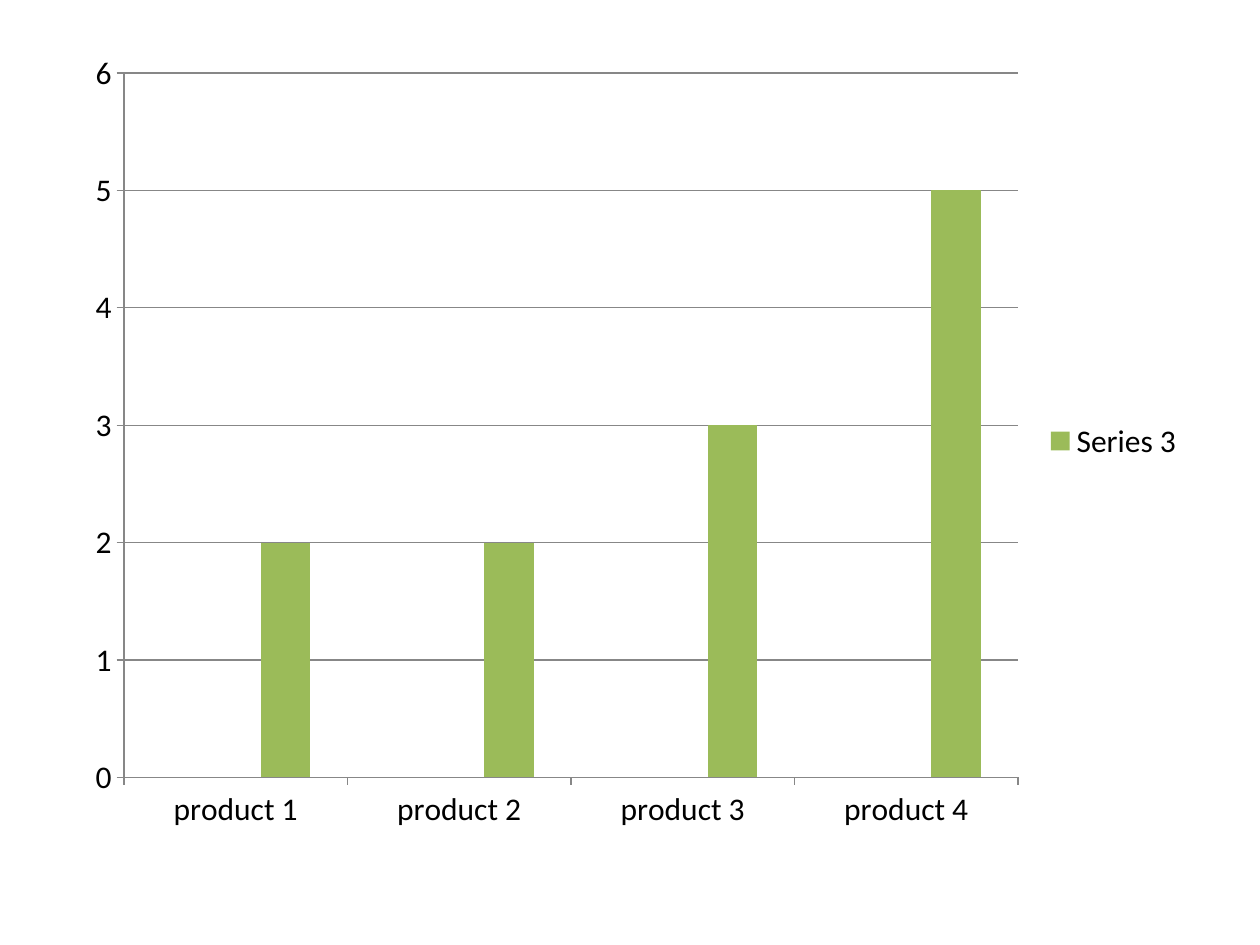
from lxml import etree
from pptx import Presentation
from pptx.chart.data import CategoryChartData
from pptx.dml.color import RGBColor
from pptx.enum.chart import XL_CHART_TYPE, XL_LEGEND_POSITION, XL_TICK_MARK
from pptx.oxml.ns import qn
from pptx.util import Inches, Pt

COLUMNS = XL_CHART_TYPE.COLUMN_CLUSTERED
LEGEND_RIGHT = XL_LEGEND_POSITION.RIGHT
TICK_OUTSIDE = XL_TICK_MARK.OUTSIDE

BLACK = RGBColor(0x00, 0x00, 0x00)
GRAY = RGBColor(0x87, 0x87, 0x87)
BLUE = RGBColor(0x4F, 0x81, 0xBD)
RED = RGBColor(0xC0, 0x50, 0x4D)
GREEN = RGBColor(0x9B, 0xBB, 0x59)

SLIDE_WIDTH, SLIDE_HEIGHT = Inches(10), Inches(7.5)
CHART_BOX = (Inches(0.58), Inches(0.3), Inches(8.92), Inches(6.4))

PRODUCTS = [f"product {number}" for number in range(1, 5)]
# The first two series hold no values but keep their place in each cluster
SERIES = [
    ("Series 1", [None] * len(PRODUCTS), BLUE),
    ("Series 2", [None] * len(PRODUCTS), RED),
    ("Series 3", [2, 2, 3, 5], GREEN),
]
EMPTY_SERIES = (0, 1)

FONT_FORMAT = {"name": "Calibri", "size": Pt(18), "bold": False}
VALUE_SCALE = {"minimum_scale": 0, "maximum_scale": 6, "major_unit": 1,
               "has_major_gridlines": True}


def set_attributes(target, values):
    for name, value in values.items():
        setattr(target, name, value)


def style_line(line):
    line.color.rgb = GRAY
    line.width = Pt(0.75)


def hide_legend_entries(legend, indexes):
    """Remove the given series from the legend."""
    position = legend._element.find(qn("c:legendPos"))
    for index in reversed(indexes):
        entry = etree.Element(qn("c:legendEntry"))
        etree.SubElement(entry, qn("c:idx")).set("val", str(index))
        etree.SubElement(entry, qn("c:delete")).set("val", "1")
        position.addnext(entry)


def add_product_chart(slide, box):
    data = CategoryChartData()
    data.categories = PRODUCTS
    for name, values, _ in SERIES:
        data.add_series(name, values)
    chart = slide.shapes.add_chart(COLUMNS, *box, data).chart
    chart.has_title = False
    set_attributes(chart.font, FONT_FORMAT)
    chart.font.color.rgb = BLACK

    # Columns
    plot = chart.plots[0]
    set_attributes(plot, {"gap_width": 150, "overlap": 0, "vary_by_categories": False})
    for series, (_, _, color) in zip(plot.series, SERIES):
        series.format.fill.solid()
        series.format.fill.fore_color.rgb = color

    # Axes and gridlines
    for axis in (chart.category_axis, chart.value_axis):
        axis.major_tick_mark = TICK_OUTSIDE
        style_line(axis.format.line)
    set_attributes(chart.value_axis, VALUE_SCALE)
    style_line(chart.value_axis.major_gridlines.format.line)

    # Legend
    chart.has_legend = True
    set_attributes(chart.legend, {"position": LEGEND_RIGHT, "include_in_layout": False})
    hide_legend_entries(chart.legend, EMPTY_SERIES)


def main():
    presentation = Presentation()
    presentation.slide_width = SLIDE_WIDTH
    presentation.slide_height = SLIDE_HEIGHT
    slide = presentation.slides.add_slide(presentation.slide_layouts[6])
    add_product_chart(slide, CHART_BOX)
    presentation.save("out.pptx")


if __name__ == "__main__":
    main()
